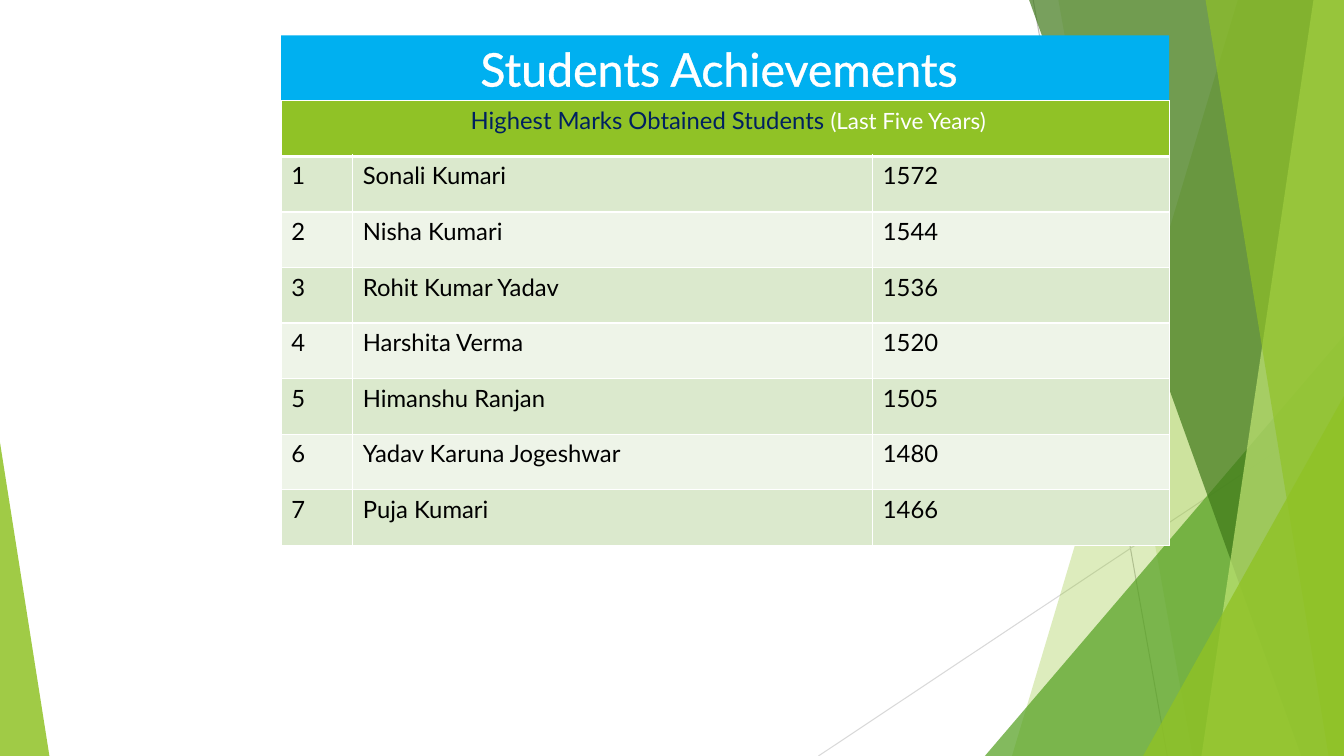
from lxml import etree
from pptx import Presentation
from pptx.dml.color import RGBColor
from pptx.enum import shapes, text
from pptx.oxml import ns
from pptx.util import Pt

# Content
TITLE = "Students Achievements "
HEADING = (" Highest Marks Obtained Students ", "(Last Five Years)")
STUDENTS = [
    ("Sonali Kumari", 1572),
    ("Nisha Kumari", 1544),
    ("Rohit Kumar Yadav", 1536),
    ("Harshita Verma", 1520),
    ("Himanshu Ranjan", 1505),
    ("Yadav Karuna Jogeshwar", 1480),
    ("Puja Kumari", 1466),
]

THEME = {
    "font": "Lato",
    "title_size": 33.2, "body_size": 17, "note_size": 16,
    "white": "FFFFFF", "black": "000000", "navy": "002060",
    "sky": "00B0F0", "lime": "90C226", "bands": ("DBE9CD", "EEF4E8"),
    "leaf": "54A021", "forest": "3F7819", "pale": "C0E474",
}

# Layout
PAGE_W, PAGE_H = 960, 540
LEFT, TITLE_TOP, TABLE_TOP = 200.9, 25.2, 72
COLUMNS = (51.1, 371.5, 211.7)
ROW_H = 39.7

# Backdrop, back to front
LINES = [((738, 0), (833.8, 540), "BFBFBF"), ((960, 290.2), (584.6, 540), "D9D9D9")]
# A facet runs from its slanted left edge (top x, bottom x) to the page's right edge;
# a wedge is a triangle standing on the page's bottom edge (left, width, height, apex).
BACKDROP = [
    ("facet", (884.2, 722.9), "lime", 30),
    ("facet", (756, 851.8), "lime", 20),
    ("wedge", (703.5, 256.5, 300.2, 1), "leaf", 72),
    ("facet", (735.1, 929.5), "forest", 70),
    ("facet", (938.2, 858.2), "pale", 70),
    ("facet", (861.1, 949), "lime", 65),
    ("wedge", (816.5, 143.5, 257, 1), "lime", 80),
    ("wedge", (0, 35.3, 223.9, 0), "lime", 85),
]


def rgb(name):
    return RGBColor.from_string(THEME.get(name, name))


def paint(target, color):
    target.fill.solid()
    target.fill.fore_color.rgb = rgb(color)


def add_span(para, words, size, color):
    span = para.add_run()
    span.text = words
    span.font.name = THEME["font"]
    span.font.size = Pt(THEME[size])
    span.font.color.rgb = rgb(color)
    return span


def add_outline(parent, tag, width, color, index):
    line = etree.Element(ns.qn(tag), w=str(Pt(width)))
    fill = etree.SubElement(line, ns.qn("a:solidFill"))
    etree.SubElement(fill, ns.qn("a:srgbClr"), val=str(rgb(color)))
    parent.insert(index, line)


def add_line(page, start, end, color):
    line = page.shapes.add_connector(
        shapes.MSO_CONNECTOR.STRAIGHT, *(Pt(v) for v in start + end))
    line.line.color.rgb = rgb(color)
    line.line.width = Pt(0.75)
    etree.SubElement(line._element.spPr, ns.qn("a:effectLst"))


def add_facet(page, top_x, bottom_x):
    corners = [(PAGE_W, 0), (PAGE_W, PAGE_H), (bottom_x, PAGE_H)]
    outline = page.shapes.build_freeform(Pt(top_x), 0)
    outline.add_line_segments([(Pt(x), Pt(y)) for x, y in corners], close=True)
    return outline.convert_to_shape()


def add_wedge(page, left, width, height, apex):
    wedge = page.shapes.add_shape(
        shapes.MSO_SHAPE.ISOSCELES_TRIANGLE,
        Pt(left), Pt(PAGE_H - height), Pt(width), Pt(height))
    wedge.adjustments[0] = apex
    return wedge


def add_backdrop(page):
    for line in LINES:
        add_line(page, *line)
    builders = {"facet": add_facet, "wedge": add_wedge}
    for kind, geometry, color, opacity in BACKDROP:
        shape = builders[kind](page, *geometry)
        shape.shadow.inherit = False
        shape.line.fill.background()
        paint(shape, color)
        tint = shape._element.spPr.find(".//" + ns.qn("a:srgbClr"))
        etree.SubElement(tint, ns.qn("a:alpha"), val=str(opacity * 1000))


def add_title(page):
    box = page.shapes.add_textbox(
        Pt(LEFT), Pt(TITLE_TOP), Pt(sum(COLUMNS)), Pt(TABLE_TOP - TITLE_TOP))
    paint(box, "sky")
    frame = box.text_frame
    frame.word_wrap = True
    frame.vertical_anchor = text.MSO_ANCHOR.MIDDLE
    para = frame.paragraphs[0]
    para.alignment = text.PP_ALIGN.CENTER
    span = add_span(para, TITLE, "title_size", "white")
    add_outline(span.font._element, "a:ln", 1.45, "white", 0)


def style_cell(cell, color, bottom=1):
    paint(cell, color)
    borders = {"a:lnL": 1, "a:lnR": 1, "a:lnT": 1, "a:lnB": bottom}
    for index, (tag, width) in enumerate(borders.items()):
        add_outline(cell._tc.get_or_add_tcPr(), tag, width, "white", index)


def add_marks_table(page):
    count = len(STUDENTS) + 1
    table = page.shapes.add_table(
        count, len(COLUMNS), Pt(LEFT), Pt(TABLE_TOP),
        Pt(sum(COLUMNS)), Pt(ROW_H * count)).table
    table.first_row = table.horz_banding = False
    for column, width in zip(table.columns, COLUMNS):
        column.width = Pt(width)
    for row in table.rows:
        row.height = Pt(ROW_H)

    # Heading across all columns
    heading = table.cell(0, 0)
    heading.merge(table.cell(0, len(COLUMNS) - 1))
    for cell in table.rows[0].cells:
        style_cell(cell, "lime", bottom=3)
    para = heading.text_frame.paragraphs[0]
    para.alignment = text.PP_ALIGN.CENTER
    add_span(para, HEADING[0], "body_size", "navy")
    add_span(para, HEADING[1], "note_size", "white")

    # Ranked students in alternating bands
    for rank, student in enumerate(STUDENTS, start=1):
        band = THEME["bands"][(rank - 1) % 2]
        for cell, value in zip(table.rows[rank].cells, (rank, *student)):
            style_cell(cell, band)
            add_span(cell.text_frame.paragraphs[0], str(value), "body_size", "black")


def main():
    deck = Presentation()
    deck.slide_width, deck.slide_height = Pt(PAGE_W), Pt(PAGE_H)
    page = deck.slides.add_slide(deck.slide_layouts[6])
    add_backdrop(page)
    add_title(page)
    add_marks_table(page)
    deck.save("out.pptx")


if __name__ == "__main__":
    main()
